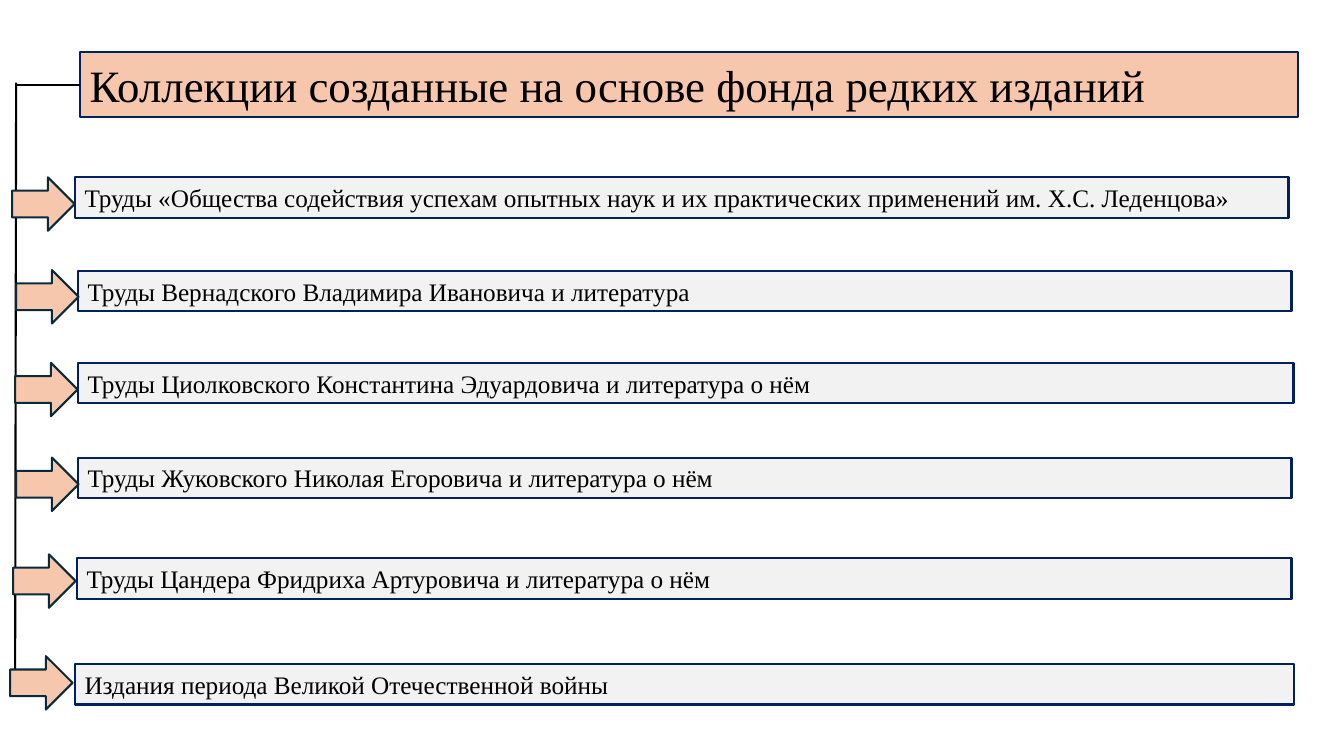
from lxml.etree import SubElement
from pptx import Presentation
from pptx.dml.color import RGBColor
from pptx.enum.shapes import MSO_CONNECTOR as Connector, MSO_SHAPE as Shape
from pptx.enum.text import MSO_ANCHOR as Anchor, MSO_AUTO_SIZE as AutoSize, PP_ALIGN as Align
from pptx.oxml.ns import qn
from pptx.util import Emu, Pt

PEACH = "F6C6AD"
GREY = "F2F2F2"
NAVY = "002060"
TEAL = "092A39"
BLACK = "000000"


def px(length):
    return Emu(length * 9144)


def color(value):
    return RGBColor.from_string(value)


class Board:
    font = "Times New Roman"
    stroke = Pt(1.5)

    def __init__(self, slide):
        self.slide = slide

    def block(self, preset, left, top, width, height, fill, line):
        block = self.slide.shapes.add_shape(preset, px(left), px(top), px(width), px(height))
        block.shadow.inherit = False
        block.fill.solid()
        block.fill.fore_color.rgb = color(fill)
        block.line.color.rgb = color(line)
        block.line.width = self.stroke
        return block

    def label(self, text, left, top, width, height, fill, size):
        label = self.block(Shape.RECTANGLE, left, top, width, height, fill, NAVY)
        frame = label.text_frame
        frame.word_wrap = True
        frame.auto_size = AutoSize.SHAPE_TO_FIT_TEXT
        frame.vertical_anchor = Anchor.TOP
        paragraph = frame.paragraphs[0]
        paragraph.alignment = Align.LEFT
        run = paragraph.add_run()
        run.text = text
        run.font.name = self.font
        run.font.size = Pt(size)
        run.font.color.rgb = color(BLACK)
        return label

    def arrow(self, left, top):
        return self.block(Shape.RIGHT_ARROW, left, top, 62, 53, PEACH, TEAL)

    def line(self, x1, y1, x2, y2):
        line = self.slide.shapes.add_connector(
            Connector.STRAIGHT, px(x1), px(y1), px(x2), px(y2))
        line.line.color.rgb = color(BLACK)
        line.line.width = self.stroke
        SubElement(line._element.spPr, qn("a:effectLst"))
        return line


COLLECTIONS = [
    ("Труды «Общества содействия успехам опытных наук и их практических применений им. Х.С. Леденцова»",
     (74, 176, 1204), (12, 176)),
    ("Труды Вернадского Владимира Ивановича и литература", (77, 269, 1204), (16, 268)),
    ("Труды Циолковского Константина Эдуардовича и литература о нём", (77, 360, 1206), (15, 360)),
    ("Труды Жуковского Николая Егоровича и литература о нём", (77, 454, 1204), (16, 454)),
    ("Труды Цандера Фридриха Артуровича и литература о нём", (76, 554, 1205), (13, 550)),
    ("Издания периода Великой Отечественной войны", (74, 659, 1209), (10, 651)),
]


def main():
    deck = Presentation()
    deck.slide_width = px(1333)
    deck.slide_height = px(750)
    board = Board(deck.slides.add_slide(deck.slide_layouts[6]))

    for name, (left, top, width), _ in COLLECTIONS:
        board.label(name, left, top, width, 40, GREY, 18)

    title = board.label("Коллекции созданные на основе фонда редких изданий",
                        79, 52, 1208, 64, PEACH, 32)
    branch = board.line(79, 84, 16, 84)
    branch.begin_connect(title, 1)
    board.line(16, 82, 15, 678)

    for _, _, (left, top) in COLLECTIONS:
        board.arrow(left, top)

    deck.save("out.pptx")


if __name__ == "__main__":
    main()
